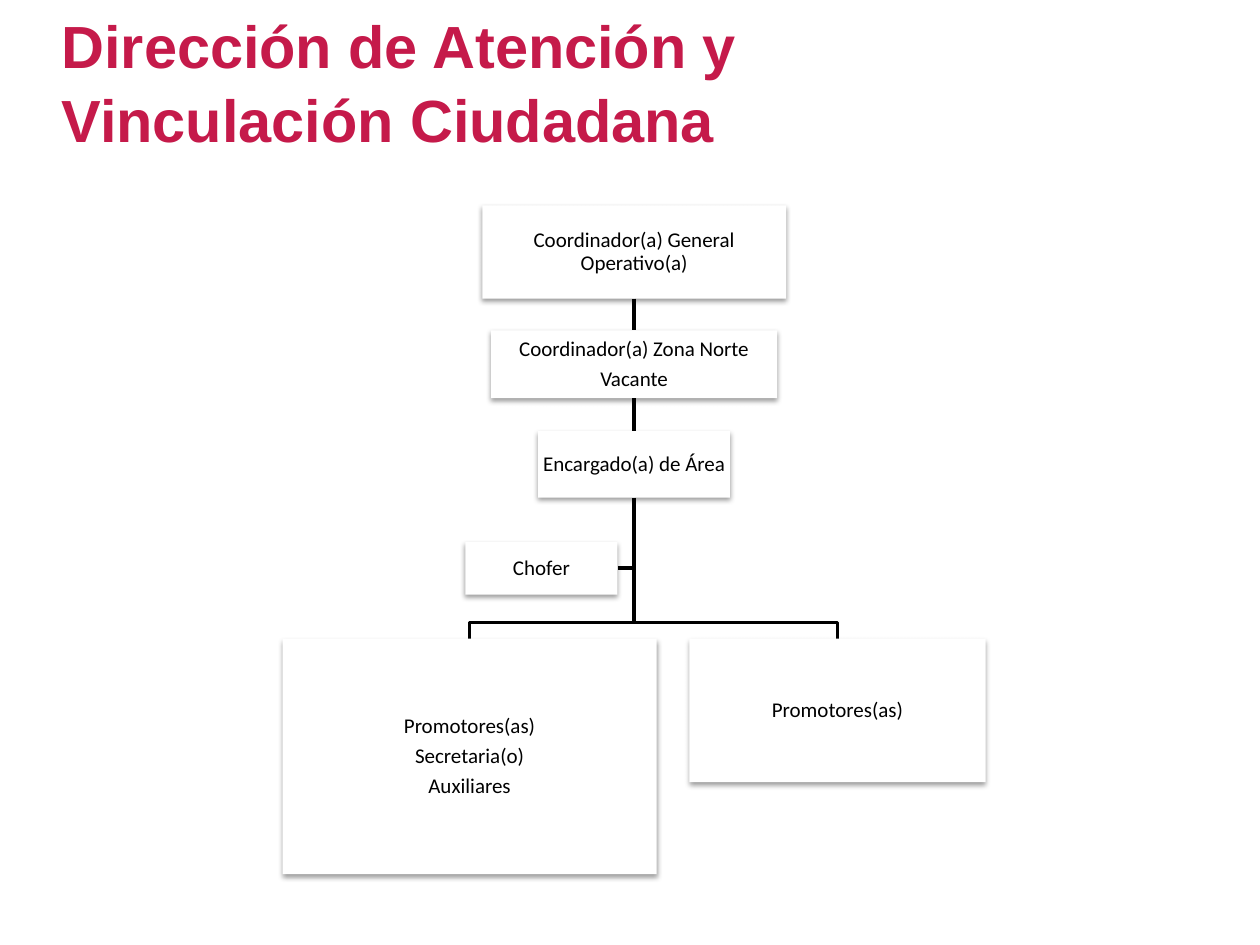
from lxml import etree
from pptx import Presentation
from pptx.dml.color import RGBColor
from pptx.enum.shapes import MSO_CONNECTOR, MSO_SHAPE
from pptx.enum.text import MSO_ANCHOR, PP_ALIGN
from pptx.oxml.ns import qn
from pptx.util import Pt

STRAIGHT = MSO_CONNECTOR.STRAIGHT
RECT = MSO_SHAPE.RECTANGLE
MIDDLE = MSO_ANCHOR.MIDDLE
CENTER, LEFT = PP_ALIGN.CENTER, PP_ALIGN.LEFT
TOP_SITE, BOTTOM_SITE = 0, 2


def color(value):
    return RGBColor.from_string(value)


class OrgChart:
    title_font, title_size, title_color = "Arial", 34, "C51A4A"
    box_font, box_size, box_fill = "Calibri", 12, "FFFFFF"
    ink, line_width = "000000", 2

    def __init__(self, slide):
        self.slide = slide

    def format_text(self, p, font, size, rgb, bold, align, spacing):
        p.alignment = align
        p.line_spacing = spacing
        for r in p.runs:
            r.font.name = font
            r.font.size = Pt(size)
            r.font.bold = bold
            r.font.color.rgb = color(rgb)

    def title(self, text, x, y, w, h):
        sp = self.slide.shapes.title
        sp.left, sp.top, sp.width, sp.height = Pt(x), Pt(y), Pt(w), Pt(h)
        tf = sp.text_frame
        tf.text = text
        tf.word_wrap = True
        tf.vertical_anchor = MIDDLE
        self.format_text(tf.paragraphs[0], self.title_font, self.title_size,
                         self.title_color, True, LEFT, 1.04)

    def add_shadow(self, sp):
        sp.shadow.inherit = False
        effects = sp._element.spPr.find(qn("a:effectLst"))
        shadow = etree.SubElement(
            effects, qn("a:outerShdw"), blurRad=str(Pt(3.1)),
            dist=str(Pt(1.6)), dir="5400000", rotWithShape="0")
        rgb = etree.SubElement(shadow, qn("a:srgbClr"), val=self.ink)
        etree.SubElement(rgb, qn("a:alpha"), val="38000")

    def box(self, text, center, y, w, h):
        sp = self.slide.shapes.add_shape(
            RECT, Pt(center - w / 2), Pt(y), Pt(w), Pt(h))
        sp.fill.solid()
        sp.fill.fore_color.rgb = color(self.box_fill)
        sp.line.fill.background()
        self.add_shadow(sp)
        tf = sp.text_frame
        tf.text = text
        tf.word_wrap = True
        tf.vertical_anchor = MIDDLE
        tf.margin_left = tf.margin_right = Pt(0.7)
        tf.margin_top = tf.margin_bottom = Pt(0.7)
        for p in tf.paragraphs:
            self.format_text(p, self.box_font, self.box_size, self.ink,
                             False, CENTER, 0.9)
            p.space_after = Pt(4.2)
        return sp

    def set_line(self, shape):
        shape.line.color.rgb = color(self.ink)
        shape.line.width = Pt(self.line_width)

    def link(self, upper, lower):
        line = self.slide.shapes.add_connector(STRAIGHT, 0, 0, 0, 0)
        line.begin_connect(upper, BOTTOM_SITE)
        line.end_connect(lower, TOP_SITE)
        self.set_line(line)
        etree.SubElement(line._element.spPr, qn("a:effectLst"))

    def branch(self, *points):
        start, *rest = [(Pt(x), Pt(y)) for x, y in points]
        builder = self.slide.shapes.build_freeform(*start)
        builder.add_line_segments(rest, close=False)
        sp = builder.convert_to_shape()
        sp.fill.background()
        sp.shadow.inherit = False
        self.set_line(sp)


def main():
    prs = Presentation()
    prs.slide_width, prs.slide_height = Pt(720), Pt(540)
    chart = OrgChart(prs.slides.add_slide(prs.slide_layouts[5]))
    chart.title("Dirección de Atención y Vinculación Ciudadana",
                28, 0.7, 461, 90)

    spine, area_bottom = 362.4, 284.4
    driver_x, driver_y = 309.4, 324.7
    bus_y, team_y = 355.6, 365
    team_centers = (268.4, 478.6)

    chart.branch((spine, area_bottom), (spine, driver_y),
                 (driver_x + 43.5, driver_y))
    for center in team_centers:
        chart.branch((spine, area_bottom), (spine, bus_y),
                     (center, bus_y), (center, team_y))

    chain = [
        chart.box(text, spine, y, w, h)
        for text, y, w, h in (
            ("Coordinador(a) General Operativo(a)", 117.4, 173.6, 53.2),
            ("Coordinador(a) Zona Norte\nVacante", 188.8, 163.4, 38.8),
            ("Encargado(a) de Área", 246.2, 109.6, 38.2),
        )
    ]
    for upper, lower in zip(chain, chain[1:]):
        chart.link(upper, lower)

    chart.box("Chofer", driver_x, driver_y - 15.1, 87, 30.2)
    teams = (("Promotores(as)\nSecretaria(o)\nAuxiliares", 213.8, 134.6),
             ("Promotores(as)", 169.2, 82))
    for center, (text, w, h) in zip(team_centers, teams):
        chart.box(text, center, team_y, w, h)

    prs.save("out.pptx")


if __name__ == "__main__":
    main()
